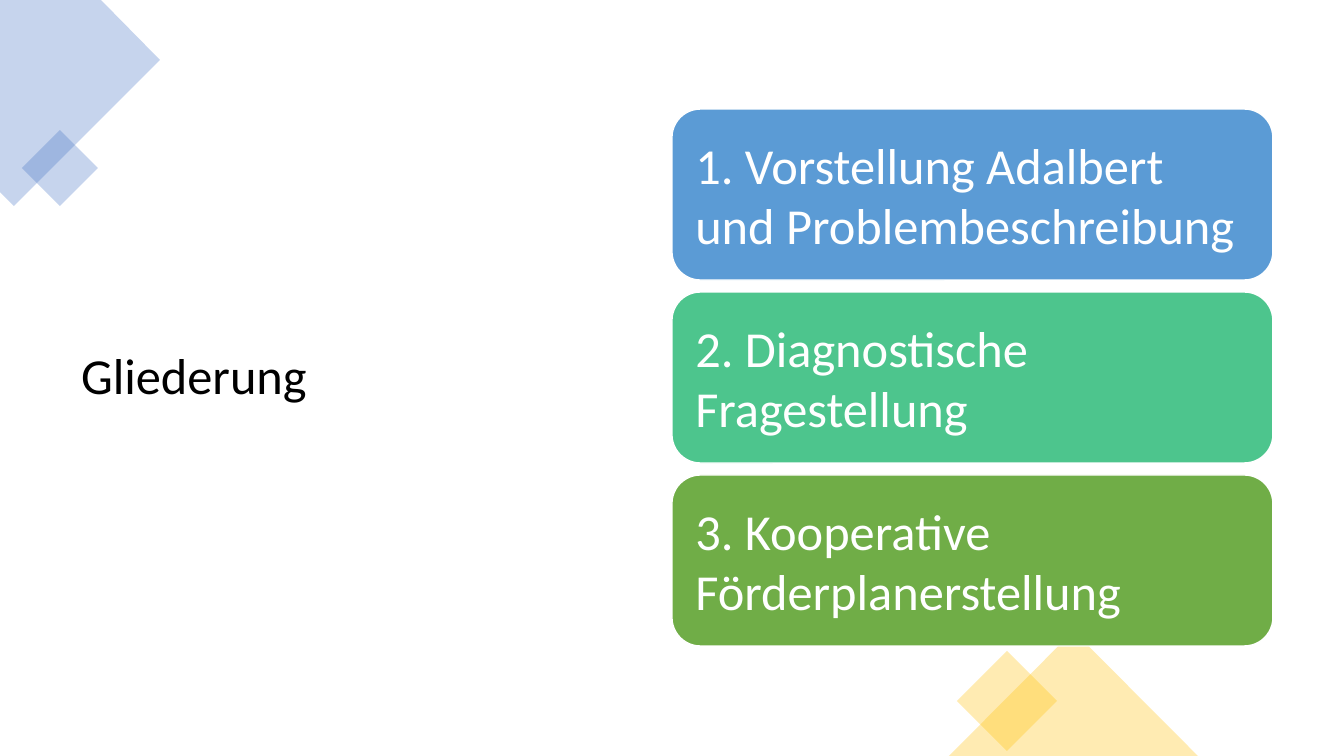
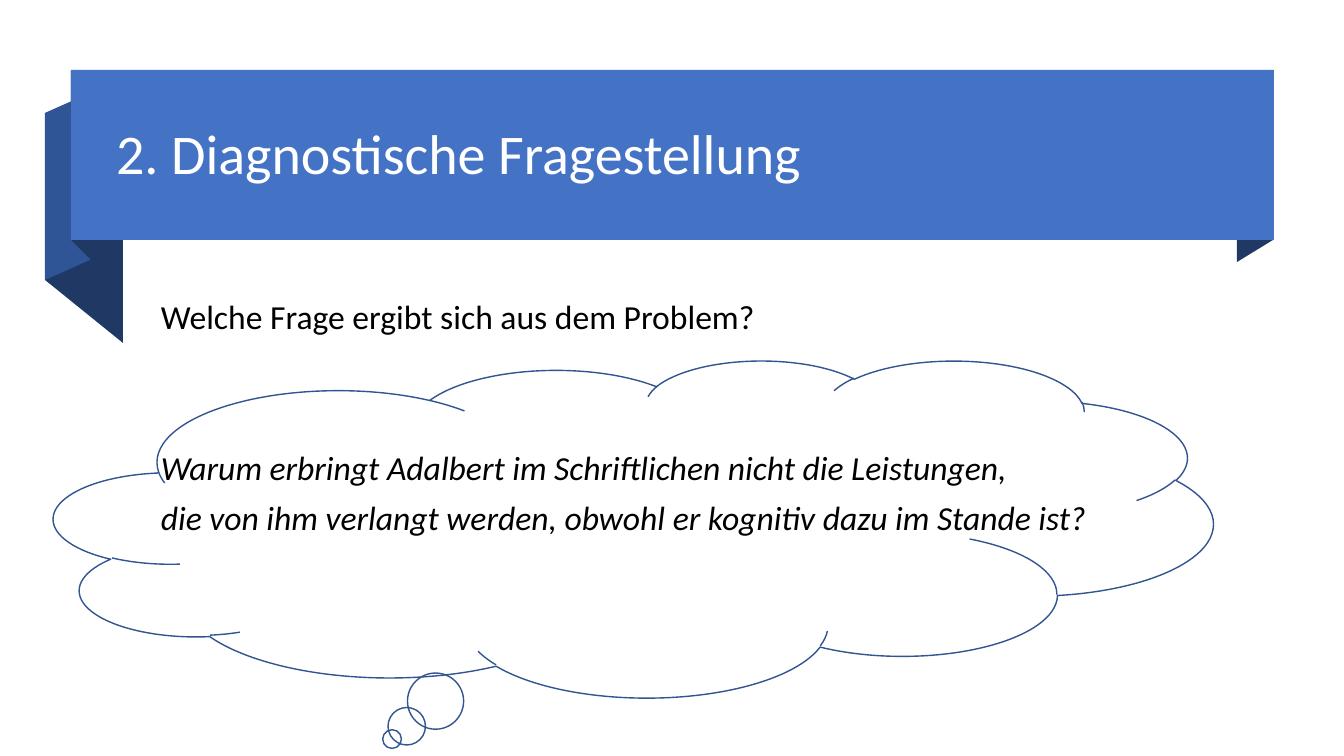
from dataclasses import dataclass

from lxml.etree import SubElement
from pptx import Presentation
from pptx.dml.color import RGBColor
from pptx.enum.shapes import MSO_SHAPE as Preset
from pptx.enum.text import MSO_ANCHOR as Anchor, MSO_AUTO_SIZE as AutoSize, PP_ALIGN as Align
from pptx.oxml.ns import qn
from pptx.util import Emu, Pt


@dataclass(frozen=True)
class Theme:
    font: str = "Calibri"
    black: str = "000000"
    white: str = "FFFFFF"
    blue: str = "4472C4"
    fold: str = "2F5597"
    shade: str = "203864"
    outline: str = "325491"
    gold: str = "FFC000"
    cards: tuple = ("5B9BD5", "4DC58D", "70AD47")
    body_size: int = 24
    card_size: int = 36
    banner_size: int = 40
    line_spacing: float = 0.9
    tint: int = 30


theme = Theme()
SCALE = 914400 / 100.8


def px(*lengths):
    return [Emu(round(length * SCALE)) for length in lengths]


def paint(shape, fill=None, line=None, opacity=100):
    shape.shadow.inherit = False
    if fill:
        shape.fill.solid()
        shape.fill.fore_color.rgb = RGBColor.from_string(fill)
        if opacity < 100:
            color = shape.element.spPr.find(qn("a:solidFill"))[0]
            SubElement(color, qn("a:alpha")).set("val", str(opacity * 1000))
    else:
        shape.fill.background()
    if line:
        shape.line.color.rgb = RGBColor.from_string(line)
        shape.line.width = Pt(1)
    else:
        shape.line.fill.background()


presentation = Presentation()
presentation.slide_width, presentation.slide_height = px(1344, 756)
title_only = presentation.slide_layouts[5]
outline_slide = presentation.slides.add_slide(title_only)
question_slide = presentation.slides.add_slide(title_only)
texts = []

polygons = [
    (outline_slide, theme.blue, theme.tint, [(0, 0), (101, 0), (160, 60), (14, 206), (0, 192)]),
    (question_slide, theme.shade, 100, [(123, 343), (45, 280), (45, 113), (123, 176)]),
    (question_slide, theme.fold, 100, [(90, 260), (45, 280), (45, 113), (90, 93)]),
    (question_slide, theme.shade, 100, [(90, 259), (71, 240), (71, 71), (90, 90)]),
    (question_slide, theme.shade, 100, [(1273, 240), (1237, 262), (1237, 92), (1273, 71)]),
]
for slide, color, opacity, points in polygons:
    builder = slide.shapes.build_freeform(*points[0], scale=SCALE)
    builder.add_line_segments(points[1:], close=True)
    paint(builder.convert_to_shape(), color, opacity=opacity)

ornaments = [
    (Preset.DIAMOND, (22, 130, 76, 76), theme.blue),
    (Preset.DIAMOND, (957, 651, 100, 100), theme.gold),
    (Preset.ISOSCELES_TRIANGLE, (949, 631, 249, 125), theme.gold),
]
for preset, box, color in ornaments:
    paint(outline_slide.shapes.add_shape(preset, *px(*box)), color, opacity=theme.tint)

topics = [
    "1. Vorstellung Adalbert und Problembeschreibung",
    "2. Diagnostische Fragestellung",
    "3. Kooperative Förderplanerstellung",
]
card_top, card_height, card_gap = 109, 171, 12
for index, (topic, color) in enumerate(zip(topics, theme.cards)):
    top = card_top + index * (card_height + card_gap)
    card = outline_slide.shapes.add_shape(Preset.ROUNDED_RECTANGLE, *px(672, top, 601, card_height))
    paint(card, color, line=theme.white)
    frame = card.text_frame
    frame.text = topic
    frame.vertical_anchor = Anchor.MIDDLE
    frame.margin_left, frame.margin_top, frame.margin_right, frame.margin_bottom = px(15, 15, 15, 15)
    texts.append((frame, theme.card_size, theme.white, 1.0))

banner = question_slide.shapes.add_shape(Preset.RECTANGLE, *px(71, 70, 1203, 170))
paint(banner, theme.blue)

titles = [
    (outline_slide, "Gliederung", (71, 71, 529, 614), theme.card_size, theme.black),
    (question_slide, topics[1], (106, 89, 1132, 134), theme.banner_size, theme.white),
]
for slide, wording, box, size, color in titles:
    title = slide.shapes.title
    title.element.getparent().append(title.element)
    title.left, title.top, title.width, title.height = px(*box)
    title.text_frame.text = wording
    title.text_frame.vertical_anchor = Anchor.MIDDLE
    texts.append((title.text_frame, size, color, theme.line_spacing))

body = question_slide.shapes.add_textbox(*px(151, 300, 1071, 260)).text_frame
body.margin_top = 0
body.text = "\n".join([
    "Welche Frage ergibt sich aus dem Problem?",
    "Warum erbringt Adalbert im Schriftlichen nicht die Leistungen,",
    "die von ihm verlangt werden, obwohl er kognitiv dazu im Stande ist?",
])
for paragraph, space, italic in zip(body.paragraphs, (0, 82, 10), (False, True, True)):
    paragraph.space_before = Pt(space)
    paragraph.font.italic = italic
    paragraph.runs[0].font.italic = italic
texts.append((body, theme.body_size, theme.black, theme.line_spacing))

cloud = question_slide.shapes.add_shape(Preset.CLOUD_CALLOUT, *px(54, 360, 1159, 337))
paint(cloud, line=theme.outline)

for frame, size, color, spacing in texts:
    frame.word_wrap = True
    frame.auto_size = AutoSize.NONE
    for paragraph in frame.paragraphs:
        paragraph.alignment = Align.LEFT
        paragraph.line_spacing = spacing
        for run in paragraph.runs:
            run.font.name = theme.font
            run.font.size = Pt(size)
            run.font.color.rgb = RGBColor.from_string(color)

presentation.save("out.pptx")
